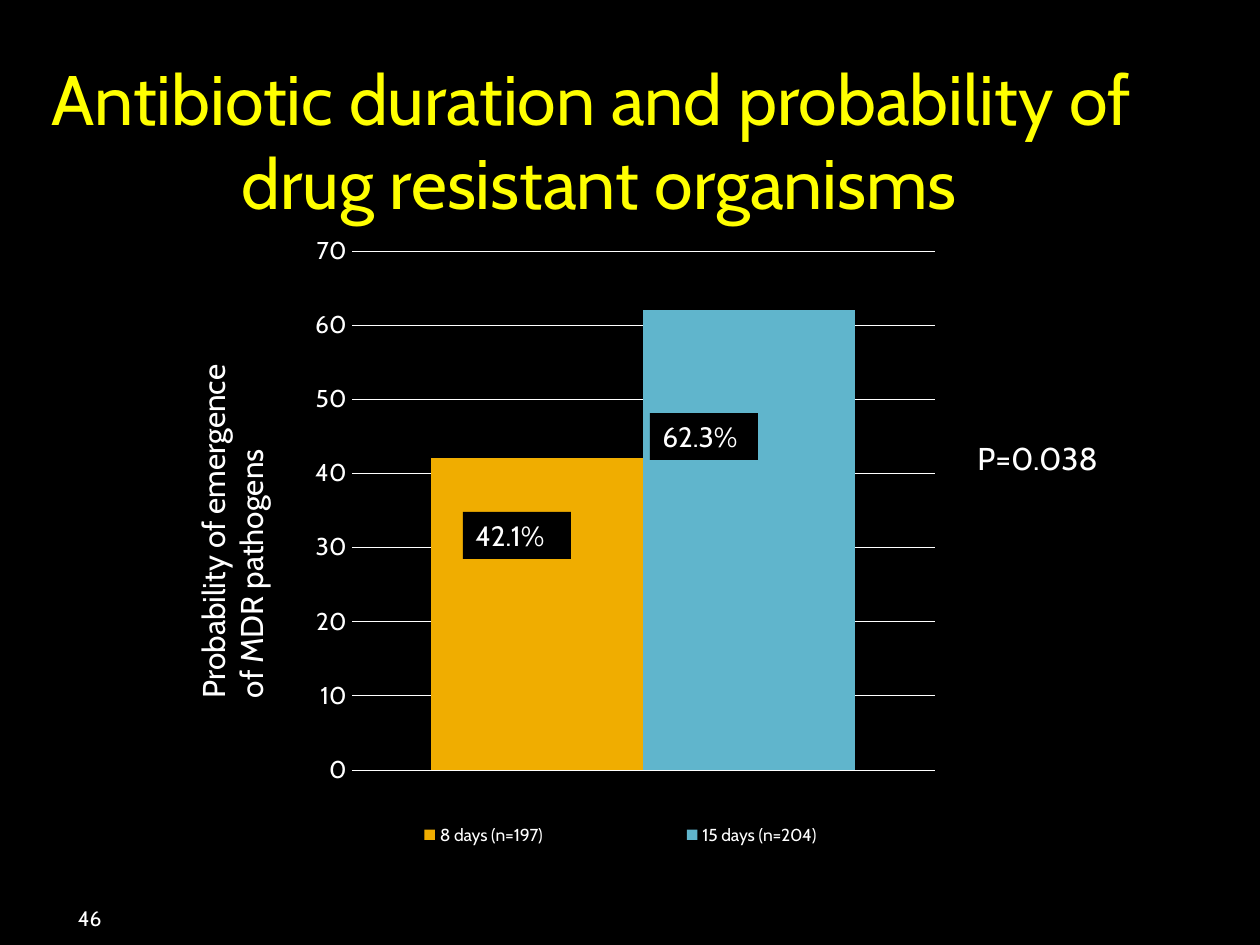
from lxml import etree
from pptx import Presentation
from pptx import util as u
from pptx.chart.data import CategoryChartData
from pptx.dml.color import RGBColor
from pptx.enum import chart as charts, shapes, text
from pptx.oxml.ns import qn

PX = 914400 / 126
FONT = "Cabin"
BLACK = RGBColor(0x00, 0x00, 0x00)
WHITE = RGBColor(0xFF, 0xFF, 0xFF)
YELLOW = RGBColor(0xFF, 0xFF, 0x00)
ORANGE = RGBColor(0xF0, 0xAD, 0x00)
BLUE = RGBColor(0x60, 0xB5, 0xCC)
SERIES = [("8 days (n=197)", 42, ORANGE), ("15 days (n=204)", 62, BLUE)]


def px(*lengths):
    return [u.Emu(round(length * PX)) for length in lengths]


def style_font(font, size, color=WHITE):
    font.name, font.size, font.color.rgb = FONT, u.Pt(size), color


def fill_text(frame, lines, size, color=WHITE):
    for index, line in enumerate(lines):
        para = frame.paragraphs[0] if index == 0 else frame.add_paragraph()
        para.alignment = text.PP_ALIGN.LEFT
        span = para.add_run()
        span.text = line
        style_font(span.font, size, color)


def add_title(page, box):
    title = page.shapes.title
    title.left, title.top, title.width, title.height = px(*box)
    frame = title.text_frame
    frame.word_wrap = True
    frame.auto_size = text.MSO_AUTO_SIZE.NONE
    frame.vertical_anchor = text.MSO_ANCHOR.TOP
    fill_text(frame, ["Antibiotic duration and probability of",
                      "drug resistant organisms"], 40, YELLOW)
    frame.paragraphs[1].alignment = text.PP_ALIGN.CENTER


def add_label(page, box, lines, size, rotation=0):
    label = page.shapes.add_textbox(*px(*box))
    label.rotation = rotation
    label.text_frame.word_wrap = True
    fill_text(label.text_frame, lines, size)
    return label


def add_value_tag(page, box, value):
    tag = page.shapes.add_shape(shapes.MSO_SHAPE.RECTANGLE, *px(*box))
    tag.shadow.inherit = False
    tag.fill.solid()
    tag.fill.fore_color.rgb = BLACK
    tag.line.fill.background()
    tag.text_frame.vertical_anchor = text.MSO_ANCHOR.TOP
    fill_text(tag.text_frame, [value], 16)


def set_layout(parent, position, chart_box, part_box, inner=False):
    """Fix the place of a chart part, given in px from the chart's corner."""
    for old in parent.findall(qn("c:layout")):
        parent.remove(old)
    layout = etree.Element(qn("c:layout"))
    manual = etree.SubElement(layout, qn("c:manualLayout"))
    settings = {"layoutTarget": "inner"} if inner else {}
    settings.update(xMode="edge", yMode="edge")
    for name, part, whole in zip("xywh", part_box, chart_box[2:] * 2):
        settings[name] = part / whole
    for name, value in settings.items():
        etree.SubElement(manual, qn(f"c:{name}")).set("val", str(value))
    parent.insert(position, layout)


def add_resistance_chart(page, box):
    data = CategoryChartData()
    data.categories = ["1"]
    for name, value, _ in SERIES:
        data.add_series(name, [value])
    chart = page.shapes.add_chart(
        charts.XL_CHART_TYPE.COLUMN_CLUSTERED, *px(*box), data).chart
    chart.has_title = False
    style_font(chart.font, 10)

    plot = chart.plots[0]
    plot.gap_width, plot.overlap, plot.vary_by_categories = 75, 0, False
    for series, (_, _, color) in zip(plot.series, SERIES):
        series.format.fill.solid()
        series.format.fill.fore_color.rgb = color

    categories, values = chart.category_axis, chart.value_axis
    for axis in (categories, values):
        axis.major_tick_mark = axis.minor_tick_mark = charts.XL_TICK_MARK.NONE
    categories.tick_label_position = charts.XL_TICK_LABEL_POSITION.NONE
    values.minimum_scale, values.maximum_scale, values.major_unit = 0, 70, 10
    values.has_major_gridlines = True
    values.format.line.fill.background()
    style_font(values.tick_labels.font, 14)
    for line in (categories.format.line, values.major_gridlines.format.line):
        line.color.rgb = WHITE
        line.width = u.Pt(0.25)

    chart.has_legend = True
    legend = chart.legend
    legend.position = charts.XL_LEGEND_POSITION.BOTTOM
    legend.include_in_layout = False
    style_font(legend.font, 10)
    area = chart.element.find(".//" + qn("c:plotArea"))
    set_layout(area, 0, box, (244, 10, 583, 523), inner=True)
    legend_xml = chart.element.find(".//" + qn("c:legend"))
    set_layout(legend_xml, 1, box, (178, 566, 669, 65))


def add_page_number(page, box, number):
    label = add_label(page, box, [number], 12)
    frame = label.text_frame
    frame.vertical_anchor = text.MSO_ANCHOR.BOTTOM
    frame.margin_left, frame.margin_bottom = px(15, 0)


def main():
    deck = Presentation()
    deck.slide_width, deck.slide_height = px(1260, 945)
    page = deck.slides.add_slide(deck.slide_layouts[5])
    page.background.fill.solid()
    page.background.fill.fore_color.rgb = BLACK

    add_title(page, (39, 49, 1120, 183))
    add_resistance_chart(page, (108, 236, 916, 650))
    add_label(page, (39, 473, 386, 89),
              ["Probability of emergence", "of MDR pathogens"], 18, rotation=270)
    add_label(page, (965, 433, 185, 63), ["P=0.038"], 18)
    add_value_tag(page, (463, 512, 108, 47), "42.1%")
    add_value_tag(page, (650, 413, 108, 47), "62.3%")
    add_page_number(page, (63, 893, 294, 38), "46")
    deck.save("out.pptx")


if __name__ == "__main__":
    main()
